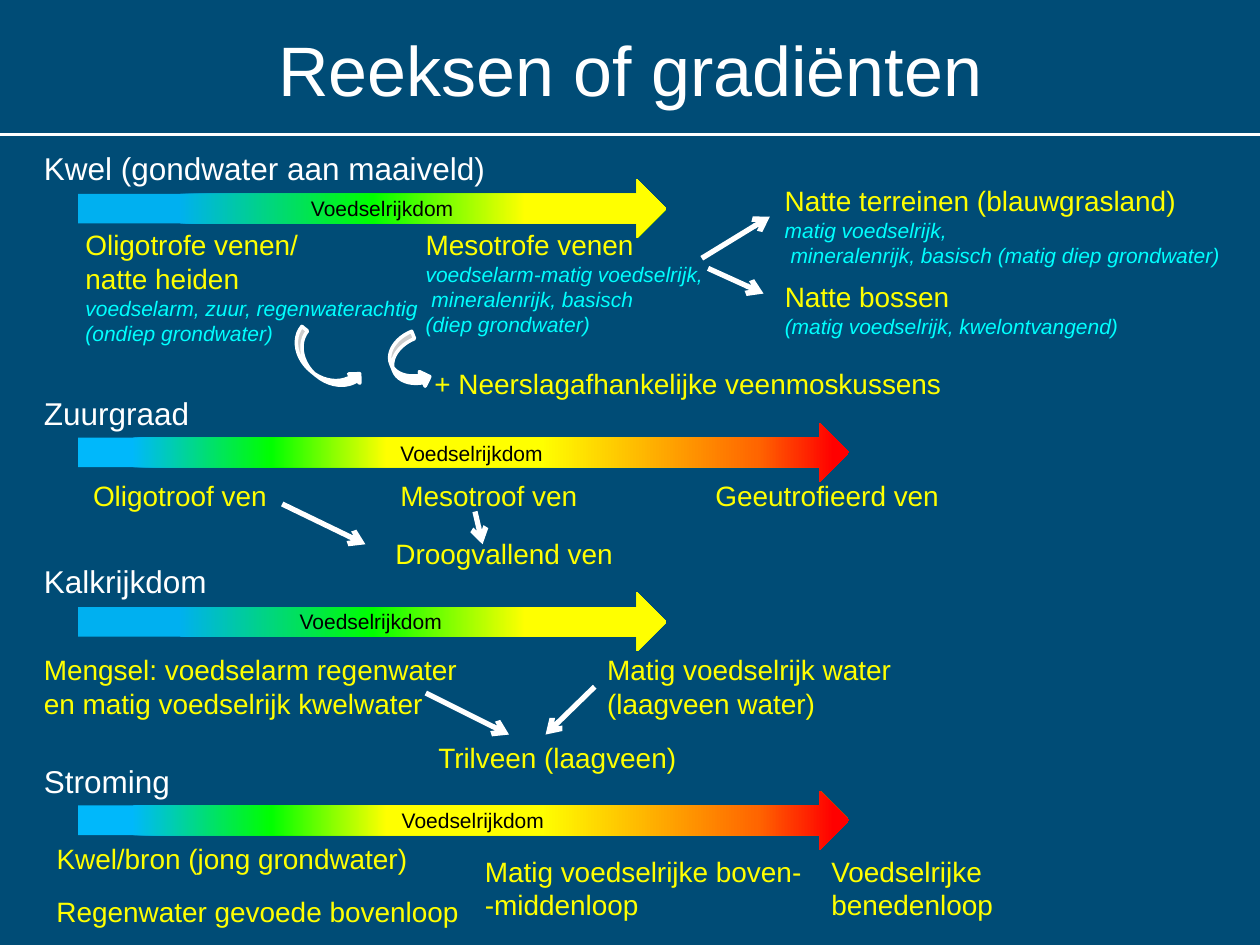
from lxml.etree import SubElement
from pptx import Presentation
from pptx.dml.color import RGBColor
from pptx.enum.shapes import MSO_CONNECTOR as Connector, MSO_SHAPE as Shape
from pptx.enum.text import MSO_ANCHOR as Anchor, MSO_AUTO_SIZE as AutoSize, PP_ALIGN as Align
from pptx.oxml import parse_xml
from pptx.oxml.ns import nsdecls, qn
from pptx.util import Inches, Pt

COLORS = {"back": "004C76", "white": "FFFFFF", "yellow": "FFFF00", "cyan": "00FFFF", "black": "000000"}
FORMATS = {
    "title": {"size": Pt(40), "color": "white"},
    "heading": {"size": Pt(18), "color": "white"},
    "type": {"size": Pt(16), "color": "yellow"},
    "note": {"size": Pt(12), "color": "cyan", "italic": True},
    "axis": {"size": Pt(12), "color": "black"},
}
SHORT_SCALE = [(17, "00B0F0"), (50, "00FF00"), (76, "FFFF00")]
LONG_SCALE = [(7, "00B8FB"), (25, "00FF00"), (40, "FFFF00"), (60, "FFFF00"), (88, "FF6600"), (98, "FF0000")]
BAR_LEFT, BAR_HEIGHT = 0.62, 0.47

# heading, heading top, bar centre, bar length, scale, label left, label top
SERIES = [
    ("Kwel (gondwater aan maaiveld)", 1.05, 1.655, 4.67, SHORT_SCALE, 2.37, 1.5),
    ("Zuurgraad", 3, 3.59, 6.12, LONG_SCALE, 3.08, 3.45),
    ("Kalkrijkdom", 4.33, 4.935, 4.67, SHORT_SCALE, 2.28, 4.78),
    ("Stroming", 5.92, 6.51, 6.12, LONG_SCALE, 3.09, 6.36),
]
# place, type lines, note lines
HABITATS = [
    ((6.13, 1.41, 3.73, 0.77), ["Natte terreinen (blauwgrasland)"],
     ["matig voedselrijk,", " mineralenrijk, basisch (matig diep grondwater)"]),
    ((3.35, 2.86, 4.27, 0.37), ["+ Neerslagafhankelijke veenmoskussens"], []),
    ((0.58, 1.76, 2.86, 1.04), ["Oligotrofe venen/", "natte heiden"],
     ["voedselarm, zuur, regenwaterachtig", "(ondiep grondwater)"]),
    ((6.13, 2.17, 3.19, 0.57), ["Natte bossen"], ["(matig voedselrijk, kwelontvangend)"]),
    ((3.28, 1.76, 3.33, 1.01), ["Mesotrofe venen"],
     ["voedselarm-matig voedselrijk,", " mineralenrijk, basisch", "(diep grondwater)"]),
    ((5.58, 3.75, 2, 0.37), ["Geeutrofieerd ven"], []),
    ((0.64, 3.75, 1.6, 0.37), ["Oligotroof ven"], []),
    ((3.04, 4.21, 1.94, 0.37), ["Droogvallend ven"], []),
    ((3.08, 3.75, 1.63, 0.37), ["Mesotroof ven"], []),
    ((0.25, 5.13, 3.58, 0.64), ["Mengsel: voedselarm regenwater", "en matig voedselrijk kwelwater"], []),
    ((4.72, 5.13, 3.42, 0.64), ["Matig voedselrijk water (laagveen water)"], []),
    ((3.38, 5.83, 2.11, 0.37), ["Trilveen (laagveen)"], []),
    ((3.75, 6.73, 2.74, 0.64), ["Matig voedselrijke boven-", "-middenloop"], []),
    ((0.35, 7.05, 3.43, 0.37), ["Regenwater gevoede bovenloop"], []),
    ((6.5, 6.73, 1.5, 0.64), ["Voedselrijke", "benedenloop"], []),
    ((0.35, 6.63, 3.02, 0.37), ["Kwel/bron (jong grondwater)"], []),
]
WRAPPED = {"Natte bossen", "Mesotrofe venen", "Matig voedselrijk water (laagveen water)"}
TRANSITIONS = [
    (5.57, 2.05, 6.11, 1.72), (5.62, 2.13, 6.06, 2.33),
    (2.24, 4, 2.9, 4.32), (3.77, 4.06, 3.83, 4.32),
    (4.72, 5.45, 4.33, 5.83), (3.38, 5.5, 4.04, 5.83),
]
CURVES = [((2.25, 2.77, 0.65, 0.23), 39.3), ((3.01, 2.76, 0.45, 0.25), 68.2)]


def inches(values):
    """Convert numbers to lengths."""
    return [Inches(value) for value in values]


def rgb(name):
    """Return a named colour."""
    return RGBColor.from_string(COLORS[name])


def write(frame, lines, **settings):
    """Fill a text frame with (text, format name) lines."""
    for name, value in settings.items():
        setattr(frame, name, value)
    for index, (text, style) in enumerate(lines):
        para = frame.add_paragraph() if index else frame.paragraphs[0]
        span = para.add_run()
        span.text = text
        span.font.name = "Arial"
        for name, value in FORMATS[style].items():
            if name == "color":
                span.font.color.rgb = rgb(value)
            else:
                setattr(span.font, name, value)


def add_text(page, place, lines, **settings):
    """Add a text box."""
    box = page.shapes.add_textbox(*inches(place))
    write(box.text_frame, lines, **settings)


def add_line(page, ends, width, arrow=False):
    """Add a white line, with an arrowhead if asked."""
    line = page.shapes.add_connector(Connector.STRAIGHT, *inches(ends))
    line.line.color.rgb = rgb("white")
    line.line.width = Pt(width)
    if arrow:
        SubElement(line.line._get_or_add_ln(), qn("a:tailEnd"), type="arrow")
    SubElement(line._element.spPr, qn("a:effectLst"))


def add_bar(page, centre, length, scale):
    """Add a gradient arrow that points right."""
    left = BAR_LEFT + (length - BAR_HEIGHT) / 2
    bar = page.shapes.add_shape(
        Shape.DOWN_ARROW, *inches((left, centre - length / 2, BAR_HEIGHT, length)))
    bar.rotation = 270
    bar.shadow.inherit = False
    bar.line.fill.background()
    stops = "".join(
        f'<a:gs pos="{stop * 1000}"><a:srgbClr val="{color}"/></a:gs>' for stop, color in scale)
    bar._element.spPr.find(qn("a:prstGeom")).addnext(parse_xml(
        f'<a:gradFill {nsdecls("a")} rotWithShape="1"><a:gsLst>{stops}</a:gsLst>'
        '<a:lin ang="5400000" scaled="0"/></a:gradFill>'))


def add_curve(page, place, angle):
    """Add a white curved arrow."""
    curve = page.shapes.add_shape(Shape.CURVED_DOWN_ARROW, *inches(place))
    curve.rotation = angle
    curve.shadow.inherit = False
    curve.fill.solid()
    curve.fill.fore_color.rgb = rgb("white")
    curve.line.color.rgb = rgb("white")
    curve.line.width = Pt(2)
    curve._element.spPr.find(qn("a:xfrm")).set("flipV", "1")


def main():
    """Build the slide with the gradient series."""
    deck = Presentation()
    deck.slide_width, deck.slide_height = inches((10, 7.5))
    page = deck.slides.add_slide(deck.slide_layouts[5])
    page.background.fill.solid()
    page.background.fill.fore_color.rgb = rgb("back")

    title = page.shapes.title
    title.left, title.top, title.width, title.height = inches((0, 0.08, 10, 0.92))
    write(title.text_frame, [("Reeksen of gradiënten", "title")],
          vertical_anchor=Anchor.MIDDLE, auto_size=AutoSize.NONE)
    title.text_frame.paragraphs[0].alignment = Align.CENTER
    add_line(page, (0, 1.07, 10, 1.07), 1.5)

    for heading, top, centre, length, scale, label_left, label_top in SERIES:
        add_bar(page, centre, length, scale)
        add_text(page, (label_left, label_top, 1.34, 0.3), [("Voedselrijkdom", "axis")],
                 word_wrap=False, auto_size=AutoSize.SHAPE_TO_FIT_TEXT)
        add_text(page, (0.25, top, 4.42, 0.56), [(heading, "heading")],
                 word_wrap=True, vertical_anchor=Anchor.MIDDLE)
    for place, types, notes in HABITATS:
        lines = [(text, "type") for text in types] + [(text, "note") for text in notes]
        add_text(page, place, lines, word_wrap=types[0] in WRAPPED,
                 auto_size=AutoSize.SHAPE_TO_FIT_TEXT)
    for ends in TRANSITIONS:
        add_line(page, ends, 3, arrow=True)
    for place, angle in CURVES:
        add_curve(page, place, angle)
    deck.save("out.pptx")


if __name__ == "__main__":
    main()
